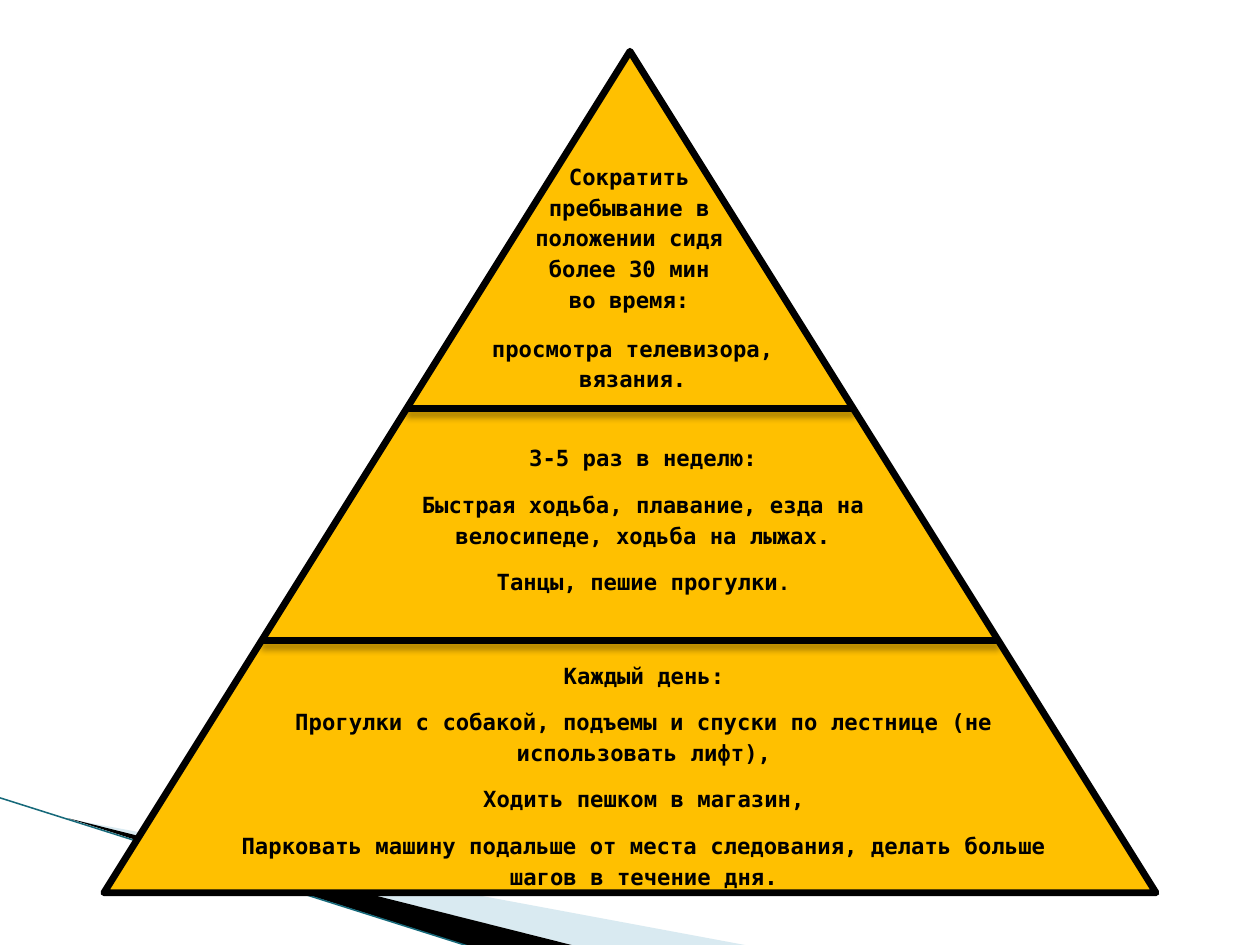
from dataclasses import dataclass

from lxml.etree import SubElement
from pptx import Presentation
from pptx.dml.color import RGBColor
from pptx.enum.shapes import MSO_CONNECTOR, MSO_SHAPE
from pptx.enum.text import PP_ALIGN
from pptx.oxml.ns import qn
from pptx.util import Cm, Pt


@dataclass
class Theme:
    font: str = "DejaVu Sans Mono"
    size: float = 14
    small: float = 12
    ink: str = "000000"
    gold: str = "FFC000"
    pale: str = "A0CBDC"
    teal: str = "16697A"
    thick: float = 4.33
    thin: float = 0.95


def write(para, text, font, size, color, bold=True):
    """Add one formatted run to a paragraph."""
    run = para.add_run()
    run.text = text
    run.font.name = font
    run.font.size = Pt(size)
    run.font.bold = bold
    run.font.color.rgb = RGBColor.from_string(color)


class Page:
    def __init__(self, slide, theme):
        self.theme = theme
        self.shapes = slide.shapes

    def group(self):
        self.shapes = self.shapes.add_group_shape().shapes

    def paint(self, shape, color, alpha=None):
        shape.shadow.inherit = False
        shape.fill.solid()
        shape.fill.fore_color.rgb = RGBColor.from_string(color)
        if alpha:
            tone = shape.fill._xPr.find(".//" + qn("a:srgbClr"))
            SubElement(tone, qn("a:alpha"), val=str(alpha * 1000))

    def stroke(self, shape, color, width):
        shape.line.color.rgb = RGBColor.from_string(color)
        shape.line.width = Pt(width)

    def wedge(self, points, color, alpha=None):
        spots = [(Cm(x), Cm(y)) for x, y in points]
        form = self.shapes.build_freeform(*spots[0])
        form.add_line_segments(spots[1:], close=True)
        shape = form.convert_to_shape()
        self.paint(shape, color, alpha)
        shape.line.fill.background()

    def peak(self, left, top, width, height):
        shape = self.shapes.add_shape(
            MSO_SHAPE.ISOSCELES_TRIANGLE, Cm(left), Cm(top), Cm(width), Cm(height))
        self.paint(shape, self.theme.gold)
        self.stroke(shape, self.theme.ink, self.theme.thick)

    def line(self, start, end, color, width, shade=False):
        ends = [Cm(v) for v in (*start, *end)]
        line = self.shapes.add_connector(MSO_CONNECTOR.STRAIGHT, *ends)
        self.stroke(line, color, width)
        effect = SubElement(line._element.spPr, qn("a:effectLst"))
        if shade:
            outer = SubElement(
                effect, qn("a:outerShdw"), blurRad=str(Pt(4)), dist=str(Pt(3)),
                dir="5400000", rotWithShape="0")
            tone = SubElement(outer, qn("a:srgbClr"), val=self.theme.ink)
            SubElement(tone, qn("a:alpha"), val="35000")

    def text(self, area, paras):
        look = self.theme
        frame = self.shapes.add_textbox(*[Cm(v) for v in area]).text_frame
        frame.word_wrap = True
        for i, runs in enumerate(paras):
            para = frame.add_paragraph() if i else frame.paragraphs[0]
            para.alignment = PP_ALIGN.CENTER
            para.line_spacing = 1.15
            para.space_after = Pt(10)
            for words, size in runs:
                write(para, words, font=look.font, size=size, color=look.ink)


def main():
    deck = Presentation()
    deck.slide_width, deck.slide_height = Cm(28), Cm(21)
    look = Theme()
    page = Page(deck.slides.add_slide(deck.slide_layouts[6]), look)

    # Corner sweep
    page.wedge([(1.52, 18.2), (16.66, 21.02), (12.78, 21.02)], look.pale, alpha=40)
    page.wedge([(1.5, 18.18), (12.78, 21.02), (10.41, 21.02)], look.ink)
    page.line((-0.03, 17.72), (10.39, 21.02), look.teal, look.thin)

    # Pyramid, with dividers that end on its sides
    left, top, width, height = 2.31, 1.14, 23.38, 18.7
    page.group()
    page.peak(left, top, width, height)
    mid = left + width / 2
    for y in (9.08, 14.24):
        half = width / 2 * (y - top) / height
        page.line((mid - half, y), (mid + half, y), look.ink, look.thick, shade=True)

    # Advice on each level
    levels = [
        ((11.56, 3.42, 4.85, 3.81),
         ["Сократить пребывание в положении сидя более 30 мин во время:"]),
        ((10.46, 7.23, 7.21, 2.08), ["просмотра телевизора, вязания."]),
        ((8.86, 9.67, 10.87, 4.04),
         ["3-5 раз в неделю:",
          "Быстрая ходьба, плавание, езда на велосипеде, ходьба на лыжах.",
          ("Танцы, пешие прогулки", ".")]),
        ((4.6, 14.5, 19.43, 5),
         ["Каждый день:",
          "Прогулки с собакой, подъемы и спуски по лестнице (не использовать лифт),",
          "Ходить пешком в магазин,",
          "Парковать машину подальше от места следования, "
          "делать больше шагов в течение дня."]),
    ]
    sizes = (look.size, look.small)
    for area, paras in levels:
        page.text(area, [
            list(zip((p,) if isinstance(p, str) else p, sizes)) for p in paras])

    deck.save("out.pptx")


if __name__ == "__main__":
    main()
